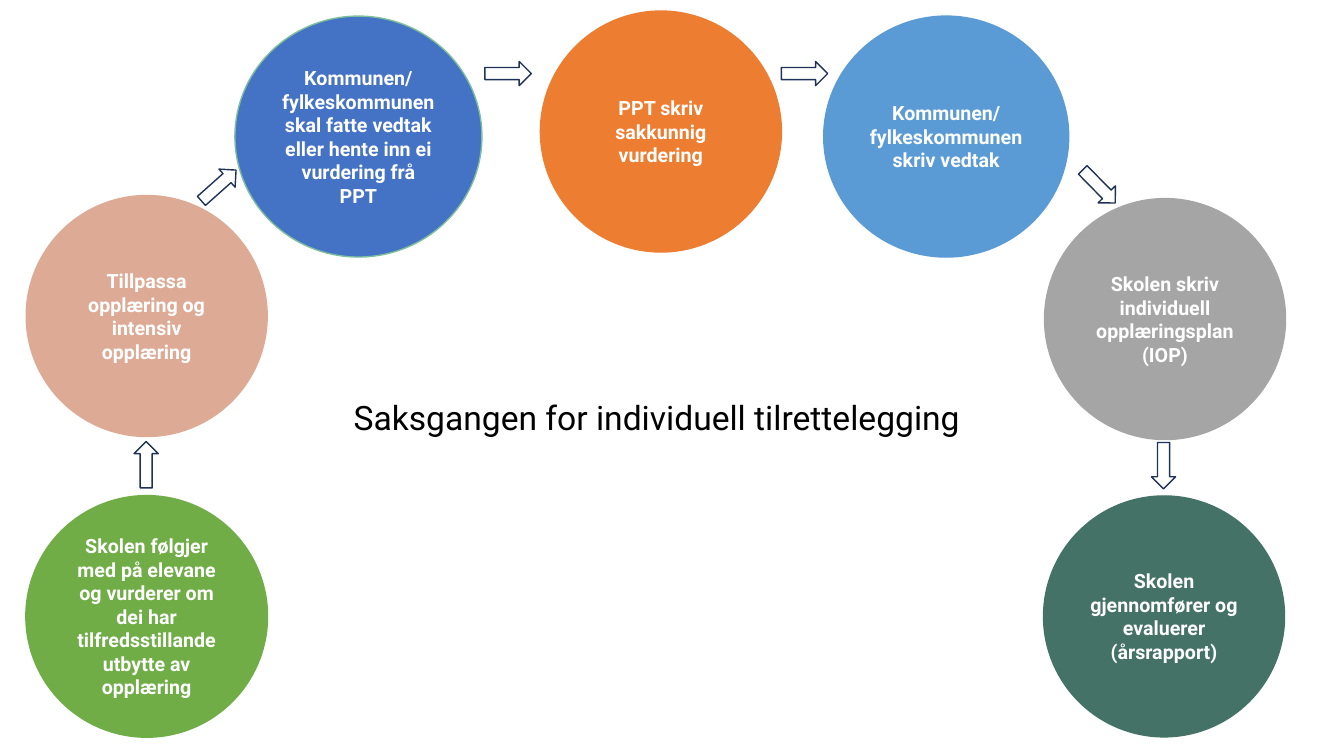
from pptx import Presentation
from pptx import util as u
from pptx.dml.color import RGBColor
from pptx.enum import shapes, text

WHITE = RGBColor(0xFF, 0xFF, 0xFF)
BLACK = RGBColor(0, 0, 0)
NAVY = RGBColor(0x1E, 0x32, 0x56)
GREEN = RGBColor(0x70, 0xAD, 0x47)
PINK = RGBColor(0xDD, 0xAA, 0x95)
BLUE = RGBColor(0x44, 0x72, 0xC4)
MINT = RGBColor(0x7D, 0xBF, 0x9D)
ORANGE = RGBColor(0xED, 0x7D, 0x31)
SKY = RGBColor(0x5B, 0x9B, 0xD5)
GREY = RGBColor(0xA5, 0xA5, 0xA5)
TEAL = RGBColor(0x44, 0x72, 0x66)

deck = Presentation()
deck.slide_width = u.Inches(13.33)
deck.slide_height = u.Inches(7.5)
slide = deck.slides.add_slide(deck.slide_layouts[6])


def draw(kind, x, y, w, h, fill, line, weight=1):
    shape = slide.shapes.add_shape(kind, *map(u.Inches, (x, y, w, h)))
    shape.shadow.inherit = False
    shape.fill.solid()
    shape.fill.fore_color.rgb = fill
    shape.line.color.rgb = line
    shape.line.width = u.Pt(weight)
    return shape


def write(para, words, size, color, bold=False):
    run = para.add_run()
    run.text = words
    run.font.name = "Roboto"
    run.font.size = u.Pt(size)
    run.font.bold = bold
    run.font.color.rgb = color


# Steps: left, top, width, fill, line, line weight, words
SIZE = 2.39
LEFT, BASE, TOP = 0.26, 4.92, 0.16
steps = [
    (LEFT, BASE, SIZE, GREEN, GREEN, 1.5,
     "Skolen følgjer med på elevane og vurderer om dei har "
     "tilfredsstillande utbytte av opplæring"),
    (LEFT, 1.94, SIZE, PINK, PINK, 1,
     "Tillpassa opplæring og intensiv opplæring"),
    (2.33, TOP, 2.45, BLUE, MINT, 1,
     "Kommunen/ fylkeskommunen skal fatte vedtak eller hente inn ei "
     "vurdering frå PPT"),
    (5.36, 0.11, SIZE, ORANGE, ORANGE, 1, "PPT skriv sakkunnig vurdering"),
    (8.17, TOP, 2.43, SKY, SKY, 1, "Kommunen/ fylkeskommunen skriv vedtak"),
    (10.36, 1.97, SIZE, GREY, GREY, 1,
     "Skolen skriv individuell opplæringsplan (IOP)"),
    (10.35, BASE, SIZE, TEAL, TEAL, 1,
     "Skolen gjennomfører og evaluerer (årsrapport)"),
]
for x, y, wide, fill, line, weight, words in steps:
    disc = draw(shapes.MSO_SHAPE.FLOWCHART_CONNECTOR, x, y, wide, SIZE,
                fill, line, weight)
    frame = disc.text_frame
    frame.word_wrap = True
    frame.vertical_anchor = text.MSO_ANCHOR.MIDDLE
    para = frame.paragraphs[0]
    para.alignment = text.PP_ALIGN.CENTER
    write(para, words, 14, WHITE, True)

# Arrows between the steps: left, top, turn in degrees
arrows = [(1.22, 4.49, 270), (1.94, 1.72, 318.3), (4.81, 0.61, 0),
          (7.75, 0.61, 0), (10.67, 1.73, 45.5), (11.31, 4.5, 90)]
for x, y, turn in arrows:
    arrow = draw(shapes.MSO_SHAPE.RIGHT_ARROW, x, y, 0.46, 0.24, WHITE, NAVY)
    arrow.rotation = turn

title = slide.shapes.add_textbox(*map(u.Inches, (3.41, 3.89, 6.3, 0.5)))
title.text_frame.word_wrap = True
title.text_frame.auto_size = text.MSO_AUTO_SIZE.SHAPE_TO_FIT_TEXT
write(title.text_frame.paragraphs[0],
      "Saksgangen for individuell tilrettelegging", 24, BLACK)

deck.save("out.pptx")
